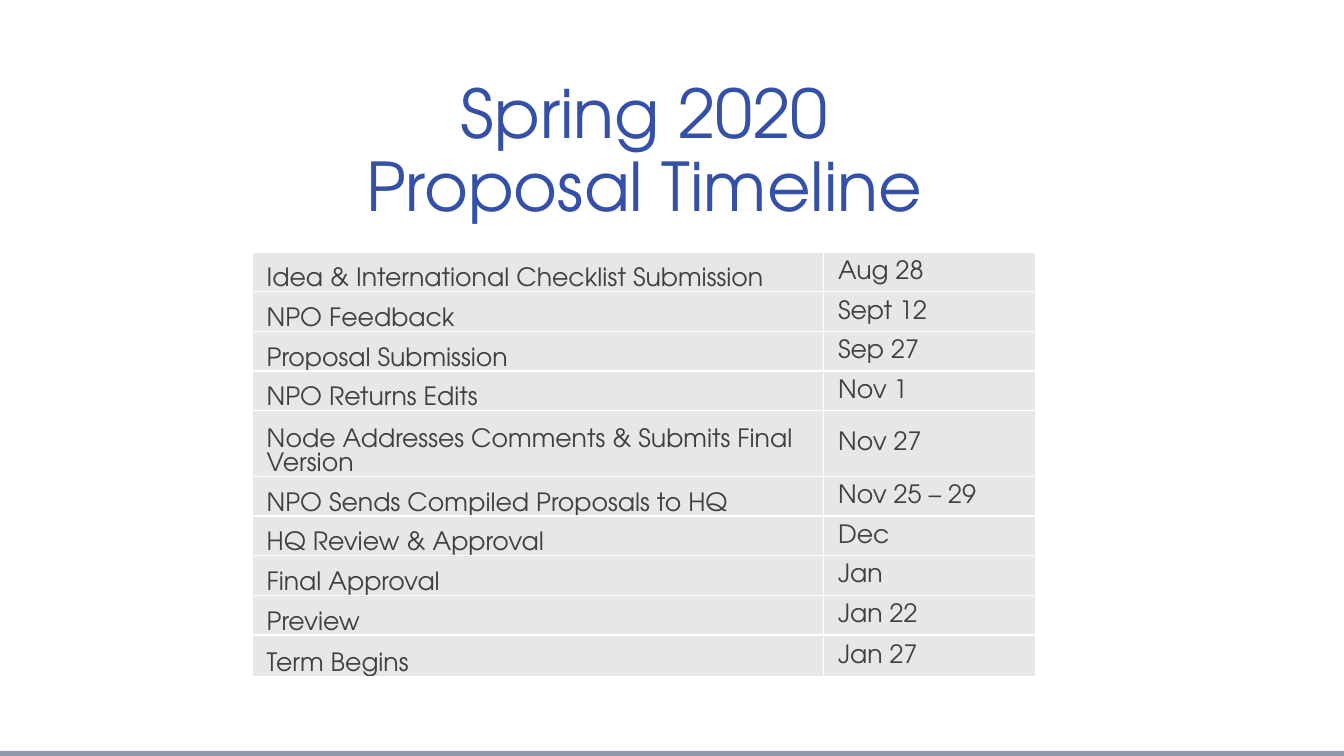
from lxml.etree import SubElement
from pptx import Presentation
from pptx.dml.color import RGBColor
from pptx.enum.shapes import MSO_SHAPE as Shape
from pptx.enum.text import MSO_ANCHOR as Anchor, MSO_AUTO_SIZE as AutoSize, PP_ALIGN as Align
from pptx.oxml.ns import qn
from pptx.util import Cm, Pt

# Content
TITLE = "Spring 2020 Proposal Timeline"
TIMELINE = [
    ("Idea & International Checklist Submission", "Aug 28"),
    ("NPO Feedback", "Sept 12"),
    ("Proposal Submission", "Sep 27"),
    ("NPO Returns Edits", "Nov 1"),
    ("Node Addresses Comments & Submits Final Version", "Nov 27"),
    ("NPO Sends Compiled Proposals to HQ", "Nov 25 – 29"),
    ("HQ Review & Approval", "Dec"),
    ("Final Approval", "Jan"),
    ("Preview", "Jan 22"),
    ("Term Begins", "Jan 27"),
]

# Style
FONT = "TeX Gyre Adventor"
BLUE, GREY, TEXT, CELL, WHITE = "3550A7", "9298A8", "404040", "E7E7E7", "FFFFFF"
COLUMN_WIDTHS = (14.4, 5.34)
ROW_HEIGHT = 1.0
SPECIAL_HEIGHTS = {4: 1.65, 9: 1.04}
ANCHORS = (Anchor.BOTTOM, Anchor.MIDDLE)


def color(value):
    return RGBColor.from_string(value)


def write(paragraph, text, size, ink, spacing):
    paragraph.line_spacing = spacing
    run = paragraph.add_run()
    run.text = text
    run.font.name = FONT
    run.font.size = Pt(size)
    run.font.color.rgb = color(ink)


def add_borders(cell):
    properties = cell._tc.get_or_add_tcPr()
    for side in ("a:lnL", "a:lnR", "a:lnT", "a:lnB"):
        line = SubElement(properties, qn(side), w=str(Pt(1)))
        fill = SubElement(line, qn("a:solidFill"))
        SubElement(fill, qn("a:srgbClr"), val=WHITE)


presentation = Presentation()
presentation.slide_width, presentation.slide_height = Cm(33.87), Cm(19.05)
slide = presentation.slides.add_slide(presentation.slide_layouts[5])

# Bottom bar
bar = slide.shapes.add_shape(Shape.RECTANGLE, 0, Cm(18.92), Cm(33.87), Cm(0.13))
bar.shadow.inherit = False
bar.fill.solid()
bar.fill.fore_color.rgb = color(GREY)
bar.line.fill.background()

# Title
title = slide.shapes.title
title.left, title.top, title.width, title.height = Cm(8.26), Cm(2.39), Cm(15.95), Cm(2.95)
frame = title.text_frame
frame.word_wrap = True
frame.auto_size = AutoSize.NONE
frame.vertical_anchor = Anchor.MIDDLE
frame.paragraphs[0].alignment = Align.CENTER
write(frame.paragraphs[0], TITLE, 48, BLUE, 0.9)

# Timeline table
heights = [SPECIAL_HEIGHTS.get(i, ROW_HEIGHT) for i in range(len(TIMELINE))]
table = slide.shapes.add_table(
    len(TIMELINE), len(COLUMN_WIDTHS), Cm(6.36), Cm(6.35),
    Cm(sum(COLUMN_WIDTHS)), Cm(sum(heights))).table
table.first_row = table.horz_banding = False
for column, width in zip(table.columns, COLUMN_WIDTHS):
    column.width = Cm(width)
for row, height, entry in zip(table.rows, heights, TIMELINE):
    row.height = Cm(height)
    for cell, text, anchor in zip(row.cells, entry, ANCHORS):
        add_borders(cell)
        cell.fill.solid()
        cell.fill.fore_color.rgb = color(CELL)
        cell.vertical_anchor = anchor
        cell.margin_left = Cm(0.36)
        cell.margin_right = cell.margin_top = Cm(0.03)
        cell.margin_bottom = 0
        write(cell.text_frame.paragraphs[0], text, 18, TEXT, 1.0)

presentation.save("out.pptx")
